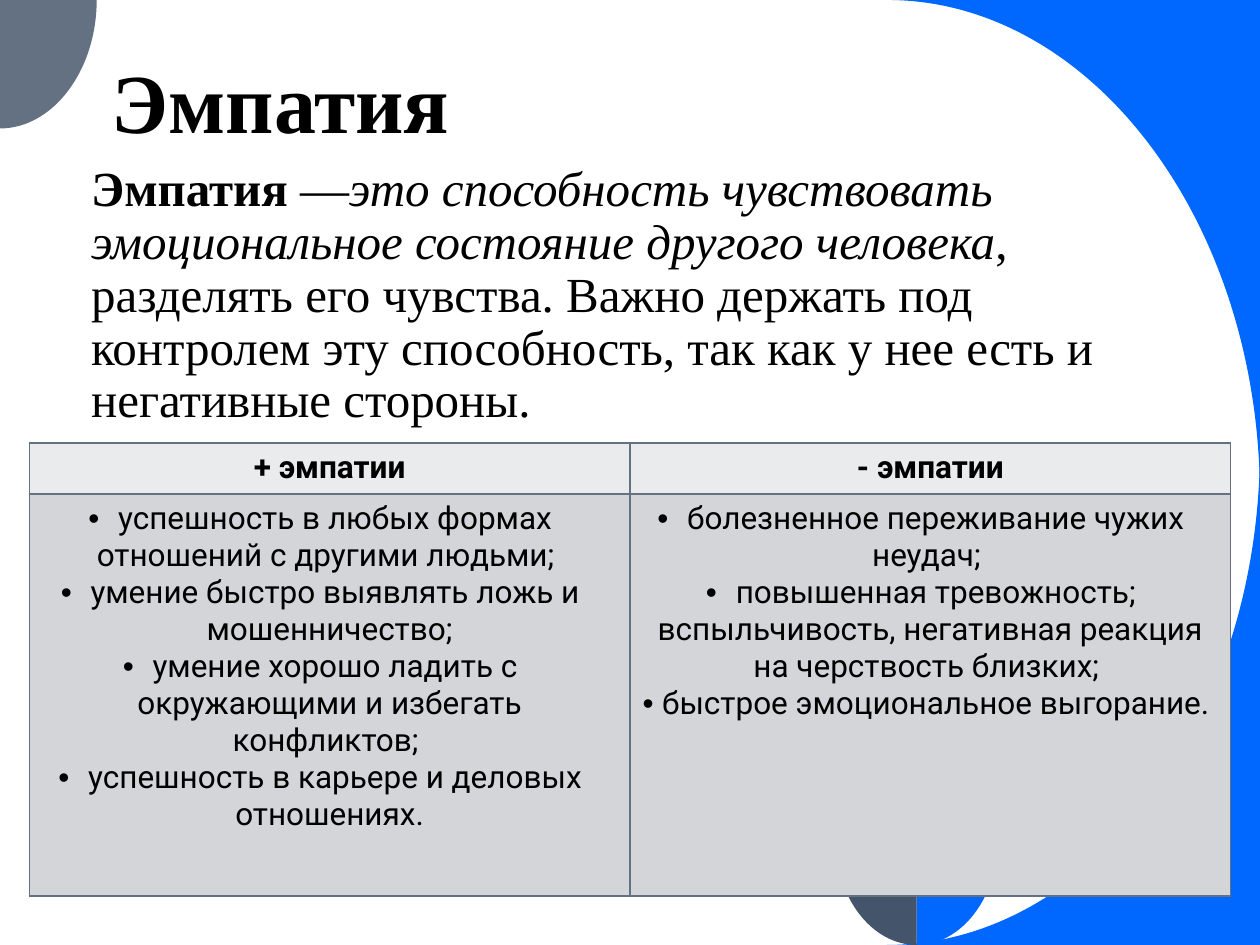
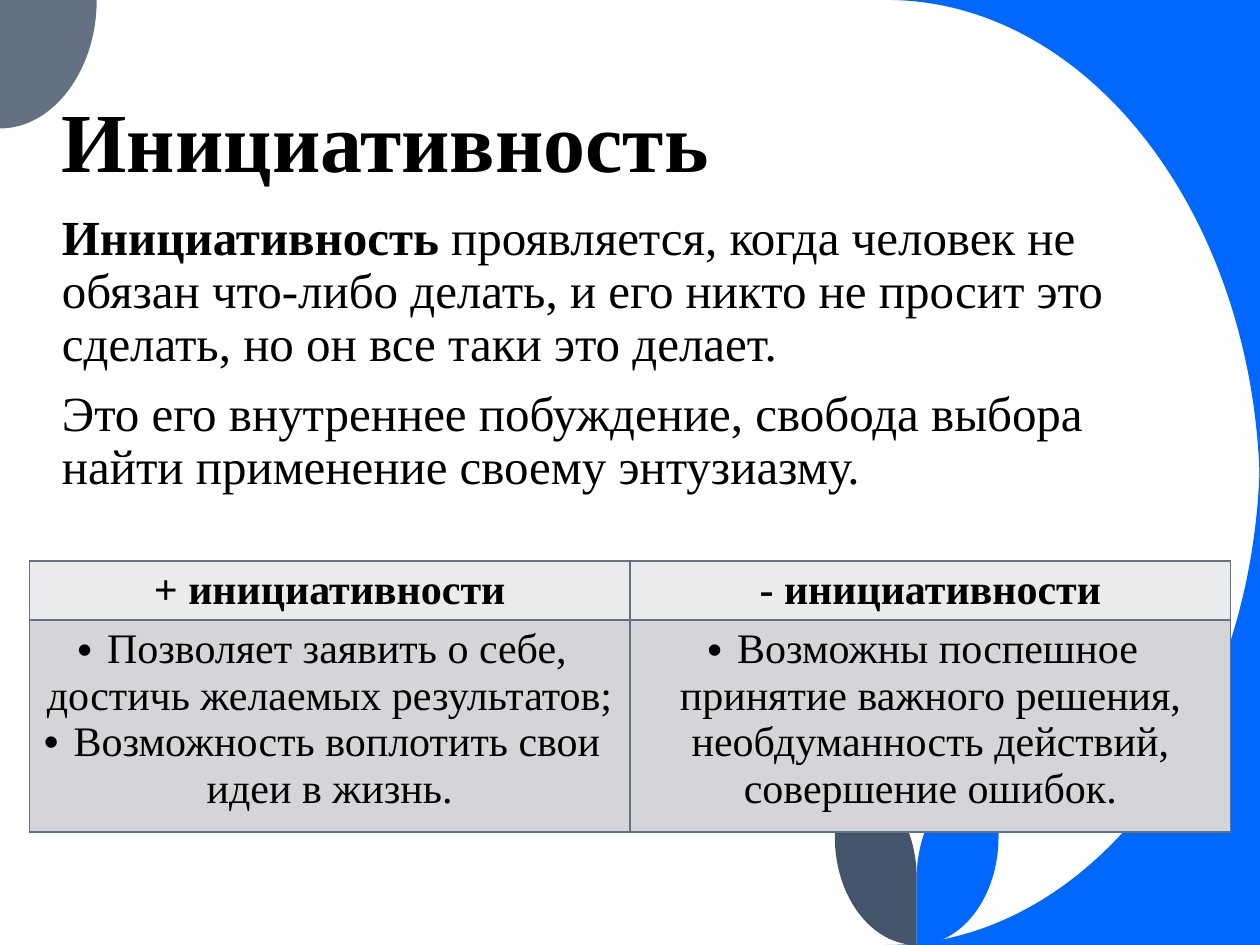
"""Build two slides on empathy and initiative, each with a pros and cons table."""
from dataclasses import dataclass

from lxml import etree
from pptx import Presentation
from pptx.dml.color import RGBColor
from pptx.enum.text import MSO_ANCHOR, MSO_AUTO_SIZE, PP_ALIGN
from pptx.oxml.ns import qn
from pptx.util import Cm, Pt

LEFT, CENTER = PP_ALIGN.LEFT, PP_ALIGN.CENTER
BOTTOM, TOP = MSO_ANCHOR.BOTTOM, MSO_ANCHOR.TOP
NO_FIT = MSO_AUTO_SIZE.NONE
TITLE_ONLY = 5


@dataclass(frozen=True)
class Theme:
    serif: str = "Times New Roman"
    sans: str = "Roboto"
    black: str = "000000"
    blue: str = "0068FF"
    slate: str = "637183"
    navy: str = "44546A"
    header: str = "EAEBED"
    cell: str = "D3D5D9"
    title: int = 48
    body: int = 28


T = Theme()
WIDTH, HEIGHT = 25.4, 19.05
BOX_WIDTH, TITLE_HEIGHT, BODY_HEIGHT = 22.86, 3.18, 12.57
TABLE_LEFT, COLUMN = 0.59, 12.11
BULLET_INDENT = 0.6

SLIDES = [
    {
        "title": "Эмпатия", "title_at": (2, 0), "body_at": (1.59, 3.18),
        "body": [[
            ("Эмпатия ", {"bold": True}),
            ("—", {}),
            ("это способность чувствовать эмоциональное состояние другого человека",
             {"italic": True}),
            (", разделять его чувства. Важно держать под контролем эту способность, "
             "так как у нее есть и негативные стороны.", {}),
        ]],
        "table": {
            "top": 8.93, "rows": (1.03, 8.1), "font": T.sans, "size": 18,
            "columns": {
                "+ эмпатии": [
                    "успешность в любых формах отношений с другими людьми; ",
                    "умение быстро выявлять ложь и мошенничество;",
                    "умение хорошо ладить с окружающими и избегать конфликтов; ",
                    "успешность в карьере и деловых отношениях.",
                ],
                "- эмпатии": [
                    "болезненное переживание чужих неудач; ",
                    "повышенная тревожность; вспыльчивость, негативная реакция "
                    "на черствость близких; ",
                    "быстрое эмоциональное выгорание.",
                ],
            },
        },
    },
    {
        "title": "Инициативность", "title_at": (0.99, 0.79), "body_at": (1, 4.17),
        "body": [
            [
                ("Инициативность", {"bold": True}),
                (" проявляется, когда человек не обязан что-либо делать, и его никто "
                 "не просит это сделать, но он все таки это делает. ", {}),
            ],
            [("Это его внутреннее побуждение, свобода выбора найти применение "
              "своему энтузиазму.", {})],
        ],
        "table": {
            "top": 11.31, "rows": (1.19, 4.27), "font": T.serif, "size": 24,
            "columns": {
                "+ инициативности": [
                    "Позволяет заявить о себе, достичь желаемых результатов;",
                    "Возможность воплотить свои идеи в жизнь.",
                ],
                "- инициативности": [
                    "Возможны поспешное принятие важного решения, "
                    "необдуманность действий, совершение ошибок.",
                ],
            },
        },
    },
]

ARC = [(WIDTH, 0), (17.88, 0), (22.02, 0, WIDTH, 4.5, WIDTH, 10.03)]
CORNER = [(0, 0), (1.95, 0), (1.95, 1.42, 1.07, 2.59, 0, 2.59)]
PETAL_AXIS = 18.48
PETAL = [(1.65, 15.52), (1.65, 16.87), (1.65, 18.08, 0.91, HEIGHT, 0, HEIGHT),
         (0, 17.7), (0, 16.59, 0.66, 15.65, 1.47, 15.54)]


def remap(outline, fx=lambda x: x, fy=lambda y: y):
    return [tuple(fy(v) if i % 2 else fx(v) for i, v in enumerate(step))
            for step in outline]


ORNAMENTS = [
    (ARC, T.blue),
    (remap(ARC, fy=lambda y: HEIGHT - y), T.blue),
    (CORNER, T.slate),
    (remap(PETAL, fx=lambda x: PETAL_AXIS + x), T.blue),
    (remap(PETAL, fx=lambda x: PETAL_AXIS - x), T.navy),
]


def rgb(value):
    return RGBColor.from_string(value)


def apply(target, values):
    for name, value in values.items():
        setattr(target, name, value)


def bend(sp, outline):
    """Join the three points of each six-number step into one cubic curve."""
    lines = iter(list(sp._element.iter(qn("a:lnTo"))))
    for step in outline[1:]:
        first, *others = [next(lines) for _ in range(len(step) // 2)]
        if others:
            first.tag = qn("a:cubicBezTo")
            for line in others:
                first.append(line[0])
                line.getparent().remove(line)


def add_ornament(s, outline, color):
    start, *rest = [(Cm(x), Cm(y)) for step in outline
                    for x, y in zip(step[::2], step[1::2])]
    builder = s.shapes.build_freeform(*start)
    builder.add_line_segments(rest, close=True)
    sp = builder.convert_to_shape()
    bend(sp, outline)
    sp.shadow.inherit = False
    sp.fill.solid()
    sp.fill.fore_color.rgb = rgb(color)
    sp.line.fill.background()
    return sp


def decorate_master(prs, s):
    """Draw the ornaments with the slide's builder and move them to the master."""
    tree = prs.slide_master.shapes._spTree
    for i, (outline, color) in enumerate(ORNAMENTS):
        sp = add_ornament(s, outline, color)
        element = sp._element
        element.nvSpPr.cNvPr.set("id", str(100 + i))
        tree.insert(2 + i, element)


def add_run(p, text, font, size, **style):
    r = p.add_run()
    r.text = text
    apply(r.font, {"name": font, "size": Pt(size), "bold": False, **style})
    r.font.color.rgb = rgb(T.black)


def write(tf, paragraphs, font, size, anchor=TOP, **spacing):
    apply(tf, {"word_wrap": True, "auto_size": NO_FIT, "vertical_anchor": anchor})
    for i, runs in enumerate(paragraphs):
        p = tf.paragraphs[0] if i == 0 else tf.add_paragraph()
        apply(p, {"alignment": LEFT, "line_spacing": 0.9, **spacing})
        for text, style in runs:
            add_run(p, text, font, size, **style)


def add_bullet(p):
    pPr = p._p.get_or_add_pPr()
    pPr.set("marL", "0")
    pPr.set("indent", str(-Cm(BULLET_INDENT)))
    etree.SubElement(pPr, qn("a:buFont")).set("typeface", "Arial")
    etree.SubElement(pPr, qn("a:buChar")).set("char", "•")


def style_cell(cell, color):
    cell.fill.solid()
    cell.fill.fore_color.rgb = rgb(color)
    tcPr = cell._tc.get_or_add_tcPr()
    for i, side in enumerate(("lnL", "lnR", "lnT", "lnB")):
        ln = etree.Element(qn(f"a:{side}"), w=str(Pt(1)))
        fill = etree.SubElement(ln, qn("a:solidFill"))
        etree.SubElement(fill, qn("a:srgbClr")).set("val", T.slate)
        tcPr.insert(i, ln)


def fill_cell(cell, lines, table, header):
    style_cell(cell, T.header if header else T.cell)
    for i, text in enumerate(lines):
        tf = cell.text_frame
        p = tf.paragraphs[0] if i == 0 else tf.add_paragraph()
        p.alignment = CENTER
        if not header:
            add_bullet(p)
        add_run(p, text, table["font"], table["size"], bold=header)


def add_pros_cons(s, table):
    columns, rows = table["columns"], table["rows"]
    frame = s.shapes.add_table(len(rows), len(columns), Cm(TABLE_LEFT), Cm(table["top"]),
                               Cm(COLUMN * len(columns)), Cm(sum(rows)))
    grid = frame.table
    apply(grid, {"first_row": False, "horz_banding": False})
    for row, height in zip(grid.rows, rows):
        row.height = Cm(height)
    for c, (heading, items) in enumerate(columns.items()):
        grid.columns[c].width = Cm(COLUMN)
        fill_cell(grid.cell(0, c), [heading], table, True)
        fill_cell(grid.cell(1, c), items, table, False)


def add_slide(prs, content):
    s = prs.slides.add_slide(prs.slide_layouts[TITLE_ONLY])
    left, top = content["title_at"]
    title = s.shapes.title
    apply(title, {"left": Cm(left), "top": Cm(top),
                  "width": Cm(BOX_WIDTH), "height": Cm(TITLE_HEIGHT)})
    write(title.text_frame, [[(content["title"], {"bold": True})]],
          T.serif, T.title, BOTTOM)
    left, top = content["body_at"]
    body = s.shapes.add_textbox(Cm(left), Cm(top), Cm(BOX_WIDTH), Cm(BODY_HEIGHT))
    write(body.text_frame, content["body"], T.serif, T.body, space_before=Pt(10))
    add_pros_cons(s, content["table"])
    return s


def main():
    prs = Presentation()
    apply(prs, {"slide_width": Cm(WIDTH), "slide_height": Cm(HEIGHT)})
    slides = [add_slide(prs, content) for content in SLIDES]
    decorate_master(prs, slides[0])
    prs.save("out.pptx")


if __name__ == "__main__":
    main()
